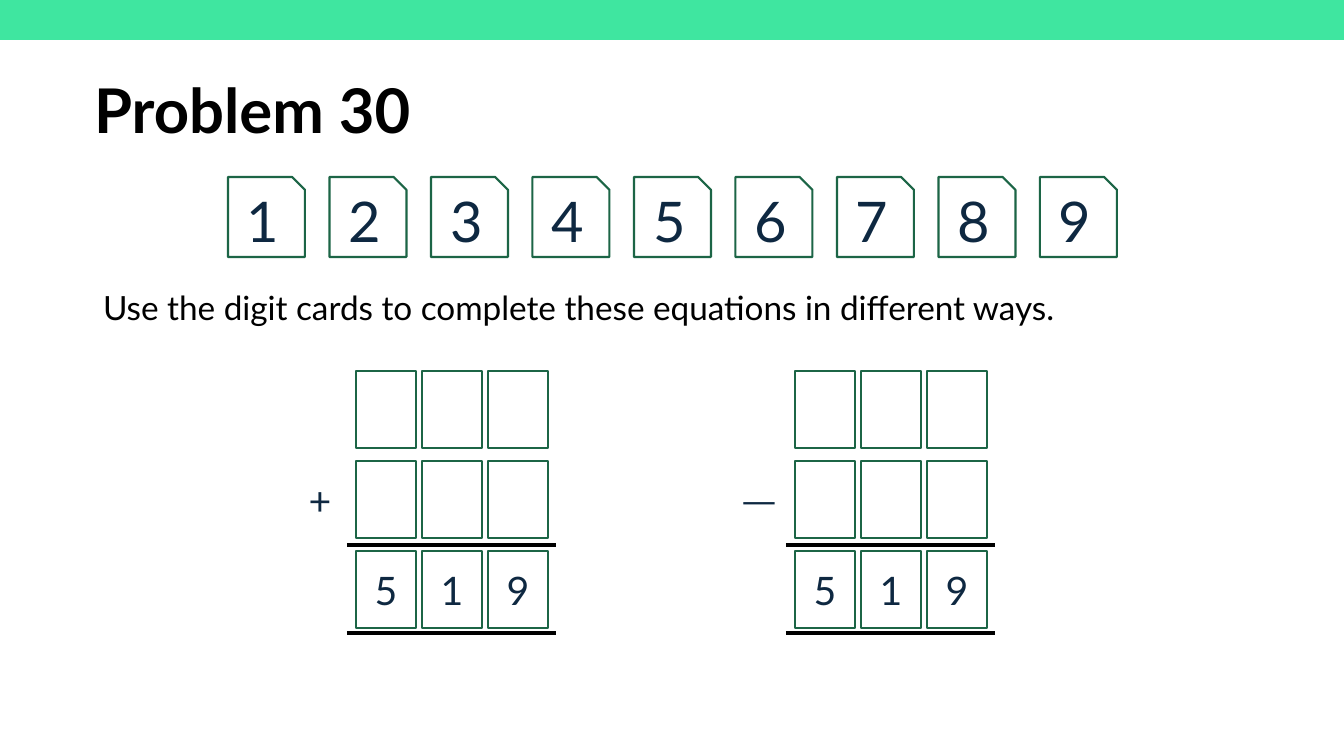
from lxml import etree
from pptx import Presentation
from pptx.dml.color import RGBColor
from pptx.enum.shapes import MSO_CONNECTOR, MSO_SHAPE
from pptx.enum.text import MSO_ANCHOR, MSO_AUTO_SIZE, PP_ALIGN
from pptx.oxml.ns import qn
from pptx.util import Pt

RECTANGLE = MSO_SHAPE.RECTANGLE
CARD = MSO_SHAPE.SNIP_1_RECTANGLE
STRAIGHT = MSO_CONNECTOR.STRAIGHT
MIDDLE, TOP = MSO_ANCHOR.MIDDLE, MSO_ANCHOR.TOP
LEFT, CENTER = PP_ALIGN.LEFT, PP_ALIGN.CENTER
NO_AUTOFIT = MSO_AUTO_SIZE.NONE

TITLE = "Problem 30"
INSTRUCTION = "Use the digit cards to complete these equations in different ways."
DIGITS = "123456789"
EQUATION_ROWS = ["   ", "   ", "519"]
EQUATIONS = [("+", 356), ("─", 795)]

COLORS = {"bar": "3FE6A0", "border": "1C6546", "digit": "0E2841",
          "text": "000000", "paper": "FFFFFF"}
FONT = "Lato"
SCALE = 914400 / 100.8

SLIDE_SIZE = (1344, 756)
BAR_BOX = (0, 0, 1344, 40)
TITLE_BOX = (84, 41, 1159, 146)
INSTRUCTION_BOX = (93, 293, 1040, 42)
CARD_TOP, CARD_WIDTH, CARD_HEIGHT = 177, 77, 80
FIRST_CARD_LEFT, LAST_CARD_LEFT = 228, 1040
CELL_WIDTH, CELL_HEIGHT = 60, 77
COLUMN_STEP, ROW_STEP = 66, 90
GRID_TOP, OPERATOR_ROW = 371, 1
RULE_TOPS, RULE_OVERHANG, RULE_LENGTH = (545, 633), 9, 209

TITLE_FORMAT = {"size": Pt(44), "bold": True}
INSTRUCTION_FORMAT = {"size": Pt(23.8), "bold": False}
CARD_FORMAT = {"size": Pt(40)}
CELL_FORMAT = {"size": Pt(28)}


def emu(*lengths):
    return [round(length * SCALE) for length in lengths]


def color(name):
    return RGBColor.from_string(COLORS[name])


def write(shape, text, font_format, color_name, alignment, anchor):
    frame = shape.text_frame
    frame.text = text
    frame.word_wrap = True
    frame.vertical_anchor = anchor
    paragraph = frame.paragraphs[0]
    paragraph.alignment = alignment
    for name, value in {"name": FONT, **font_format}.items():
        setattr(paragraph.font, name, value)
    paragraph.font.color.rgb = color(color_name)
    return paragraph


def fill_placeholder(shape, box, text, font_format, anchor, line_spacing):
    shape.left, shape.top, shape.width, shape.height = emu(*box)
    shape.text_frame.auto_size = NO_AUTOFIT
    paragraph = write(shape, text, font_format, "text", LEFT, anchor)
    paragraph.line_spacing = line_spacing
    paragraph.space_before = Pt(0)
    return paragraph


def add_box(slide, kind, box, text, font_format, border="border"):
    shape = slide.shapes.add_shape(kind, *emu(*box))
    shape.shadow.inherit = False
    shape.fill.background()
    shape.line.color.rgb = color(border)
    shape.line.width = Pt(1.5)
    if text.strip():
        write(shape, text, font_format, "digit", CENTER, MIDDLE)


def add_rule(slide, left, top):
    rule = slide.shapes.add_connector(STRAIGHT, *emu(left, top, left + RULE_LENGTH, top))
    rule.line.color.rgb = color("text")
    rule.line.width = Pt(2.25)
    etree.SubElement(rule._element.spPr, qn("a:effectLst"))


def add_header(slide):
    bar = slide.shapes.add_shape(RECTANGLE, *emu(*BAR_BOX))
    bar.shadow.inherit = False
    bar.fill.solid()
    bar.fill.fore_color.rgb = color("bar")
    bar.line.fill.background()
    fill_placeholder(slide.shapes.title, TITLE_BOX, TITLE, TITLE_FORMAT, MIDDLE, 0.9)


def add_instruction(slide):
    body = slide.placeholders[1]
    paragraph = fill_placeholder(body, INSTRUCTION_BOX, INSTRUCTION,
                                 INSTRUCTION_FORMAT, TOP, 0.7)
    properties = paragraph._p.get_or_add_pPr()
    properties.set("marL", "0")
    properties.set("indent", "0")
    bullet = etree.SubElement(properties, qn("a:buNone"))
    properties.find(qn("a:defRPr")).addprevious(bullet)


def add_cards(slide):
    step = (LAST_CARD_LEFT - FIRST_CARD_LEFT) / (len(DIGITS) - 1)
    for index, digit in enumerate(DIGITS):
        box = (FIRST_CARD_LEFT + index * step, CARD_TOP, CARD_WIDTH, CARD_HEIGHT)
        add_box(slide, CARD, box, digit, CARD_FORMAT)


def add_equation(slide, operator, left):
    for row, digits in enumerate(EQUATION_ROWS):
        for column, digit in enumerate(digits):
            box = (left + column * COLUMN_STEP, GRID_TOP + row * ROW_STEP,
                   CELL_WIDTH, CELL_HEIGHT)
            add_box(slide, RECTANGLE, box, digit, CELL_FORMAT)
    operator_box = (left - COLUMN_STEP, GRID_TOP + OPERATOR_ROW * ROW_STEP,
                    CELL_WIDTH, CELL_HEIGHT)
    add_box(slide, RECTANGLE, operator_box, operator, CELL_FORMAT, "paper")
    for top in RULE_TOPS:
        add_rule(slide, left - RULE_OVERHANG, top)


def main():
    presentation = Presentation()
    presentation.slide_width, presentation.slide_height = emu(*SLIDE_SIZE)
    slide = presentation.slides.add_slide(presentation.slide_layouts[1])
    add_header(slide)
    add_cards(slide)
    add_instruction(slide)
    for operator, left in EQUATIONS:
        add_equation(slide, operator, left)
    presentation.save("out.pptx")


if __name__ == "__main__":
    main()
